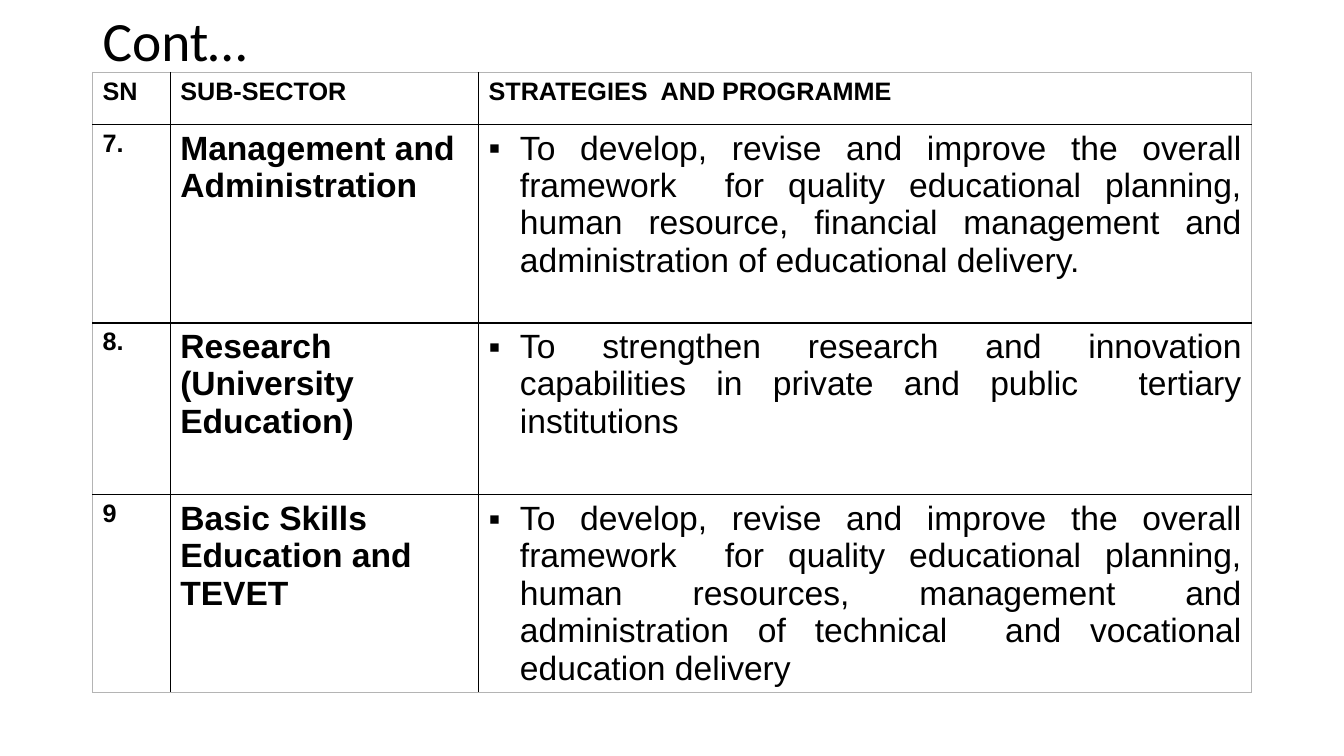
import pptx
import pptx.dml.color
import pptx.enum.text
import pptx.oxml
import pptx.oxml.ns
import pptx.util
from pptx.util import Cm

BLACK = pptx.dml.color.RGBColor(0x00, 0x00, 0x00)
GRAY = pptx.dml.color.RGBColor(0xB4, 0xB4, 0xB4)
JUSTIFY = pptx.enum.text.PP_ALIGN.JUSTIFY

HEADINGS = ("SN", "SUB-SECTOR", "STRATEGIES  AND PROGRAMME")
SUB_SECTORS = (
    ("7.", "Management and Administration",
     "To develop, revise and improve the overall framework  for quality "
     "educational planning, human resource, financial management and "
     "administration of educational delivery."),
    ("8.", "Research (University Education)",
     "To strengthen research and innovation capabilities in private and "
     "public  tertiary institutions"),
    ("9", "Basic Skills Education and TEVET",
     "To develop, revise and improve the overall framework  for quality "
     "educational planning, human resources, management and administration "
     "of technical  and vocational education delivery"),
)
COLUMN_WIDTHS = (1.96, 7.77, 19.48)
ROW_HEIGHTS = (1.32, 5.0, 4.33, 4.95)


def add_element(parent, tag, **attributes):
    element = pptx.oxml.parse_xml(f"<a:{tag} {pptx.oxml.ns.nsdecls('a')}/>")
    for name, value in attributes.items():
        element.set(name, str(value))
    parent.append(element)
    return element


def add_border(cell, side, color, points):
    properties = cell._tc.get_or_add_tcPr()
    line = add_element(properties, side, w=pptx.util.Pt(points))
    add_element(add_element(line, "solidFill"), "srgbClr", val=color)


def add_square_bullet(para):
    properties = para._p.get_or_add_pPr()
    indent = Cm(0.79)
    properties.set("marL", str(indent))
    properties.set("indent", str(-indent))
    add_element(properties, "buFont", typeface="Arial")
    add_element(properties, "buChar", char="▪")


def set_font(para, name, size, bold):
    para.font.name = name
    para.font.size = pptx.util.Pt(size)
    para.font.bold = bold
    para.font.color.rgb = BLACK


def place_title(page, text, left, top, width, height):
    title = page.shapes.title
    title.left, title.top, title.width, title.height = left, top, width, height
    frame = title.text_frame
    frame.text = text
    frame.word_wrap = True
    frame.auto_size = pptx.enum.text.MSO_AUTO_SIZE.NONE
    frame.vertical_anchor = pptx.enum.text.MSO_ANCHOR.MIDDLE
    para = frame.paragraphs[0]
    para.alignment = pptx.enum.text.PP_ALIGN.LEFT
    para.line_spacing = 0.9
    set_font(para, "Calibri", 39.6, False)


def add_strategy_table(page, left, top, width, height):
    rows = (HEADINGS,) + SUB_SECTORS
    last_row, last_column = len(rows) - 1, len(HEADINGS) - 1
    frame = page.shapes.add_table(len(rows), len(HEADINGS),
                                  left, top, width, height)
    table = frame.table
    table.first_row = False
    table.horz_banding = False
    for column, column_width in zip(table.columns, COLUMN_WIDTHS):
        column.width = Cm(column_width)
    for row, row_height in zip(table.rows, ROW_HEIGHTS):
        row.height = Cm(row_height)

    for r, texts in enumerate(rows):
        for c, text in enumerate(texts):
            cell = table.cell(r, c)
            cell.text = text
            para = cell.text_frame.paragraphs[0]
            is_strategy = r > 0 and c == last_column
            if is_strategy:
                para.alignment = JUSTIFY
                add_square_bullet(para)
            set_font(para, "Arial", 24 if r > 0 and c > 0 else 18,
                     not is_strategy)

            # Thin gray frame outside, black rules inside
            outer_edges = {"lnL": c == 0, "lnR": c == last_column,
                           "lnT": r == 0, "lnB": r == last_row}
            for side, is_outer in outer_edges.items():
                add_border(cell, side, GRAY if is_outer else BLACK,
                           0.5 if is_outer else 1)
            cell.fill.background()


def build_strategy_page(deck):
    page = deck.slides.add_slide(deck.slide_layouts[5])
    left, width = Cm(2.33), Cm(sum(COLUMN_WIDTHS))
    place_title(page, "Cont…", left, Cm(0.4), width, Cm(1.4))
    add_strategy_table(page, left, Cm(1.82), width, Cm(sum(ROW_HEIGHTS)))


def main():
    deck = pptx.Presentation()
    deck.slide_width = Cm(33.87)
    deck.slide_height = Cm(19.05)
    build_strategy_page(deck)
    deck.save("out.pptx")


if __name__ == "__main__":
    main()
